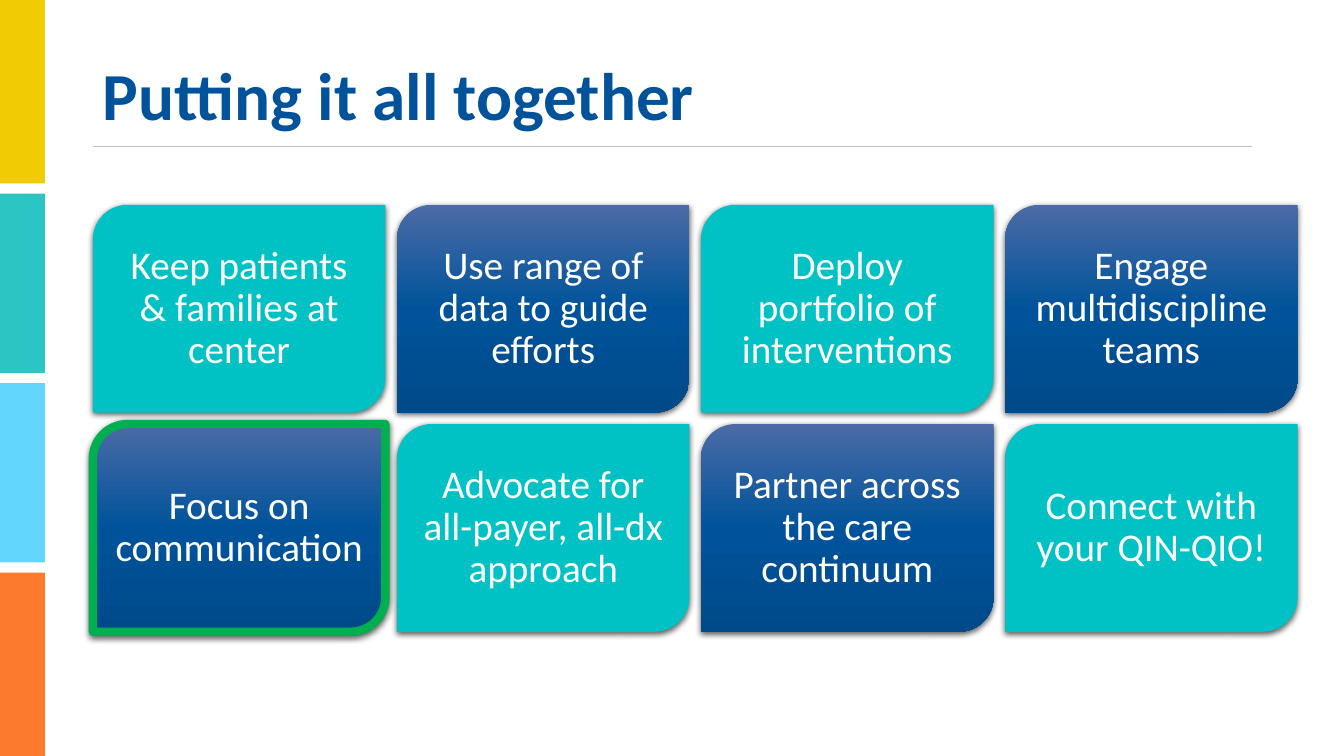
from copy import deepcopy
from dataclasses import dataclass

from lxml.etree import SubElement
from pptx import Presentation
from pptx.dml.color import RGBColor
from pptx.enum.shapes import MSO_CONNECTOR as Connector, MSO_SHAPE as Shape
from pptx.enum.text import MSO_ANCHOR as Anchor, PP_ALIGN as Align
from pptx.oxml.ns import qn
from pptx.util import Cm, Pt


@dataclass(frozen=True)
class Theme:
    font: str = "Calibri"
    title_size: int = 48
    card_size: int = 28
    line_spacing: float = 0.9
    title: str = "00539B"
    rule: str = "B9C1C1"
    card_text: str = "FFFFFF"
    teal: str = "00C2C4"
    blues: tuple = ("4B6BA6", "00539B", "004A8A")
    highlight: str = "00B050"
    shadow: str = "000000"


@dataclass(frozen=True)
class Box:
    """A region of the slide, in centimetres."""
    left: float
    top: float
    width: float
    height: float

    def lengths(self):
        return [Cm(side) for side in (self.left, self.top, self.width, self.height)]


THEME = Theme()
BARS = [("F1CB03", 4.62), ("2CC5C4", 4.52), ("63D6FD", 4.52), ("FB7A2D", 4.62)]
CARDS = [
    ["Keep patients & families at center", "Use range of data to guide efforts",
     "Deploy portfolio of interventions", "Engage multidiscipline teams"],
    ["Focus on communication", "Advocate for all-payer, all-dx approach",
     "Partner across the care continuum", "Connect with your QIN-QIO!"],
]
HIGHLIGHTED = "Focus on communication"


def rgb(code):
    return RGBColor.from_string(code)


def apply(target, settings):
    for name, value in settings.items():
        setattr(target, name, value)


def write(frame, text, frame_format, font_format, color, align):
    apply(frame, {"word_wrap": True, "vertical_anchor": Anchor.MIDDLE, **frame_format})
    para = frame.paragraphs[0]
    apply(para, {"alignment": align, "line_spacing": THEME.line_spacing})
    span = para.add_run()
    span.text = text
    apply(span.font, {"name": THEME.font, **font_format})
    span.font.color.rgb = rgb(color)


def add_plain_shape(page, kind, box):
    shape = page.shapes.add_shape(kind, *box.lengths())
    shape.shadow.inherit = False
    shape.line.fill.background()
    return shape


def fill_gradient(shape, colors):
    """Spread the colours evenly from top to bottom."""
    shape.fill.gradient()
    shape.fill.gradient_angle = 270
    stop_list = shape.fill._xPr.find(".//" + qn("a:gsLst"))
    while len(stop_list) < len(colors):
        stop_list.append(deepcopy(stop_list[0]))
    for index, (stop, color) in enumerate(zip(shape.fill.gradient_stops, colors)):
        stop.color.rgb = rgb(color)
        stop.position = index / (len(colors) - 1)


def add_shadow(shape):
    effects = shape._element.spPr.find(qn("a:effectLst"))
    shadow = SubElement(effects, qn("a:outerShdw"), blurRad=str(Pt(4.5)),
                        dist=str(Pt(1.5)), dir="5400000", rotWithShape="0")
    color = SubElement(shadow, qn("a:srgbClr"), val=THEME.shadow)
    SubElement(color, qn("a:alpha"), val="63000")


# Coloured bars down the left edge
def draw_bars(page, box):
    gap = (box.height - sum(height for _, height in BARS)) / (len(BARS) - 1)
    top = box.top
    for color, height in BARS:
        bar = add_plain_shape(page, Shape.RECTANGLE, Box(box.left, top, box.width, height))
        bar.fill.solid()
        bar.fill.fore_color.rgb = rgb(color)
        top += height + gap


# Title with a thin rule running through its box
def draw_title(page, box, text):
    rule_top = Cm(box.top + 3.02)
    rule = page.shapes.add_connector(Connector.STRAIGHT, Cm(box.left), rule_top,
                                     Cm(box.left + box.width), rule_top)
    rule.line.color.rgb = rgb(THEME.rule)
    rule.line.width = Pt(0.75)
    SubElement(rule._element.spPr, qn("a:effectLst"))
    title = page.shapes.add_textbox(*box.lengths())
    write(title.text_frame, text, {}, {"size": Pt(THEME.title_size), "bold": True},
          THEME.title, Align.LEFT)


# One card: teal or blue, with an outline when highlighted
def draw_card(page, box, text, is_teal):
    card = add_plain_shape(page, Shape.ROUND_2_DIAG_RECTANGLE, box)
    if is_teal:
        card.fill.solid()
        card.fill.fore_color.rgb = rgb(THEME.teal)
    else:
        fill_gradient(card, THEME.blues)
    if text == HIGHLIGHTED:
        card.line.color.rgb = rgb(THEME.highlight)
        card.line.width = Pt(6)
    add_shadow(card)
    margins = {f"margin_{side}": Cm(0.29) for side in ("left", "top", "right", "bottom")}
    write(card.text_frame, text, margins, {"size": Pt(THEME.card_size)},
          THEME.card_text, Align.CENTER)


# Checkerboard of cards
def draw_cards(page, box, gap=0.29):
    rows, columns = len(CARDS), len(CARDS[0])
    width = (box.width - gap * (columns - 1)) / columns
    height = (box.height - gap * (rows - 1)) / rows
    for row, texts in enumerate(CARDS):
        for column, text in enumerate(texts):
            place = Box(box.left + column * (width + gap),
                        box.top + row * (height + gap), width, height)
            draw_card(page, place, text, (row + column) % 2 == 0)


def main():
    deck = Presentation()
    apply(deck, {"slide_width": Cm(33.87), "slide_height": Cm(19.05)})
    page = deck.slides.add_slide(deck.slide_layouts[6])
    draw_bars(page, Box(0, 0, 1.13, 19.05))
    draw_title(page, Box(2.34, 0.66, 29.21, 3.68), "Putting it all together")
    draw_cards(page, Box(2.34, 5.16, 30.36, 10.76))
    deck.save("out.pptx")


if __name__ == "__main__":
    main()
